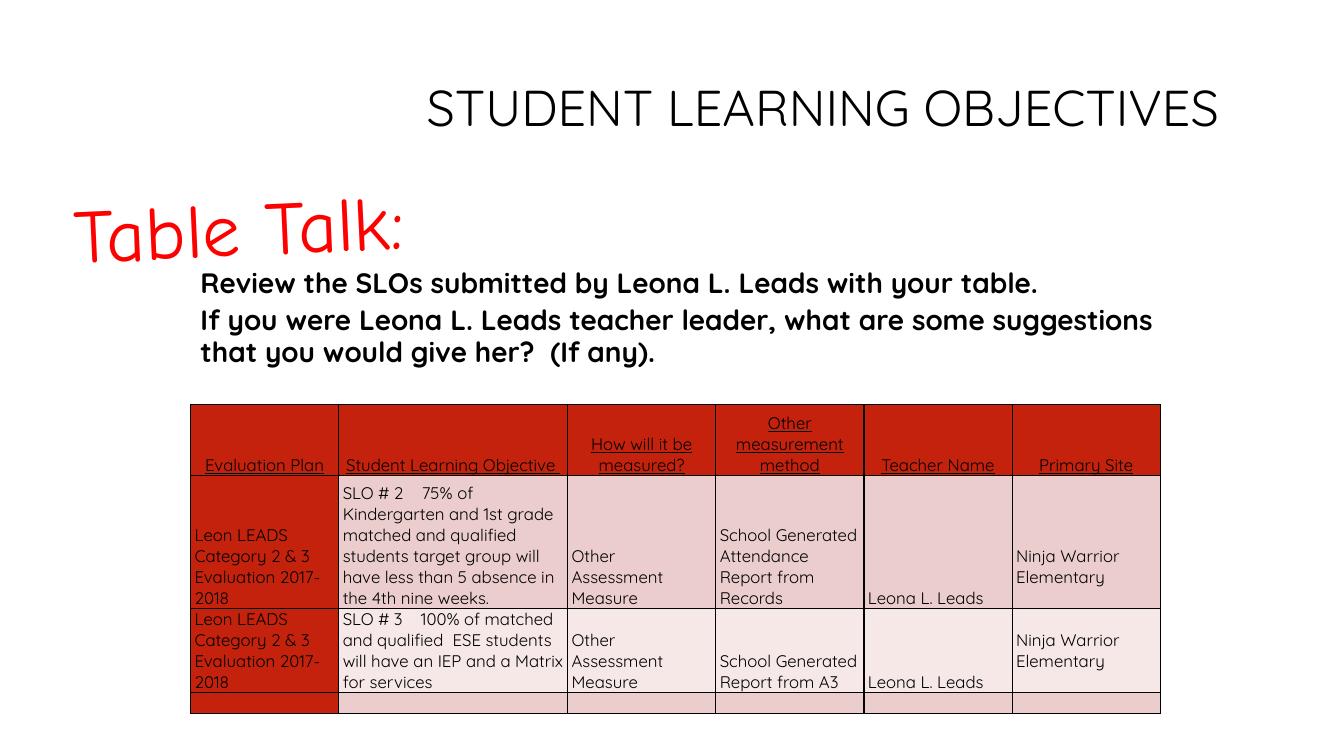
from lxml import etree
from pptx import Presentation
from pptx.dml.color import RGBColor
from pptx.enum.text import MSO_ANCHOR, PP_ALIGN
from pptx.oxml.ns import qn
from pptx.util import Inches, Pt

TITLE = "STUDENT LEARNING OBJECTIVES"
CALLOUT = "Table Talk:"
PROMPTS = [
    "Review the SLOs submitted by Leona L. Leads with your table.",
    "If you were Leona L. Leads teacher leader, what are some suggestions that you would give her?  (If any).",
]
PLAN = "Leon LEADS Category 2 & 3 Evaluation 2017-2018"
MEASURE = "Other Assessment Measure"
TEACHER = "Leona L. Leads"
SITE = "Ninja Warrior Elementary"
OBJECTIVES = [
    ["Evaluation Plan", "Student Learning Objective ", "How will it be measured?",
     "Other measurement method", "Teacher Name", "Primary Site"],
    [PLAN,
     "SLO # 2    75% of Kindergarten and 1st grade matched and qualified students target group "
     "will have less than 5 absence in the 4th nine weeks.",
     MEASURE, "School Generated Attendance Report from Records", TEACHER, SITE],
    [PLAN,
     "SLO # 3    100% of matched and qualified  ESE students will have an IEP and a Matrix for services",
     MEASURE, "School Generated Report from A3", TEACHER, SITE],
    [""] * 6,
]
COLUMN_WIDTHS = [1.47, 2.27, 1.47, 1.47, 1.47, 1.47]
ROW_HEIGHTS = [0.71, 1.32, 0.83, 0.21]

BLACK = RGBColor(0x00, 0x00, 0x00)
BRIGHT_RED = RGBColor(0xFF, 0x00, 0x00)
DARK_RED = RGBColor(0xC4, 0x22, 0x0D)
BANDS = [RGBColor(0xF5, 0xE8, 0xE7), RGBColor(0xEA, 0xCD, 0xCC)]
MAIN_FONT = "Quicksand"
CALLOUT_FONT = "Comic Neue"
LEFT, CENTER, RIGHT = PP_ALIGN.LEFT, PP_ALIGN.CENTER, PP_ALIGN.RIGHT
TOP, MIDDLE, BOTTOM = MSO_ANCHOR.TOP, MSO_ANCHOR.MIDDLE, MSO_ANCHOR.BOTTOM


def add_run(paragraph, text, size, font=MAIN_FONT, color=BLACK, bold=False, underline=False):
    run = paragraph.add_run()
    run.text = text
    run.font.size = Pt(size)
    run.font.name = font
    run.font.color.rgb = color
    run.font.bold = bold
    run.font.underline = underline


def add_text_frame(slide, left, top, width, height, anchor=TOP, rotation=0):
    shape = slide.shapes.add_textbox(Inches(left), Inches(top), Inches(width), Inches(height))
    shape.rotation = rotation
    shape.text_frame.word_wrap = True
    shape.text_frame.vertical_anchor = anchor
    return shape.text_frame


def add_borders(cell):
    properties = cell._tc.get_or_add_tcPr()
    for position, side in enumerate(("a:lnL", "a:lnR", "a:lnT", "a:lnB")):
        line = etree.Element(qn(side), w=str(Pt(1)))
        fill = etree.SubElement(line, qn("a:solidFill"))
        etree.SubElement(fill, qn("a:srgbClr"), val=str(BLACK))
        properties.insert(position, line)


def fill_cell(cell, text, row, column):
    header = row == 0
    cell.fill.solid()
    cell.fill.fore_color.rgb = DARK_RED if header or column == 0 else BANDS[row % 2]
    cell.vertical_anchor = BOTTOM
    cell.margin_left = cell.margin_right = Inches(0.04)
    cell.margin_top = 0
    cell.margin_bottom = Inches(0.21) if text == SITE else 0
    add_borders(cell)
    paragraph = cell.text_frame.paragraphs[0]
    paragraph.alignment = CENTER if header else LEFT
    if text:
        add_run(paragraph, text, 12, underline=header)
    else:
        ending = etree.SubElement(paragraph._p, qn("a:endParaRPr"), sz="1200")
        etree.SubElement(ending, qn("a:latin"), typeface=MAIN_FONT)


def add_objectives_table(slide):
    table = slide.shapes.add_table(
        len(ROW_HEIGHTS), len(COLUMN_WIDTHS), Inches(1.89), Inches(4.01),
        Inches(sum(COLUMN_WIDTHS)), Inches(sum(ROW_HEIGHTS))).table
    for column, width in zip(table.columns, COLUMN_WIDTHS):
        column.width = Inches(width)
    for row, height in zip(table.rows, ROW_HEIGHTS):
        row.height = Inches(height)
    for row, texts in enumerate(OBJECTIVES):
        for column, text in enumerate(texts):
            fill_cell(table.cell(row, column), text, row, column)


def main():
    presentation = Presentation()
    presentation.slide_width = Inches(13.33)
    presentation.slide_height = Inches(7.5)
    slide = presentation.slides.add_slide(presentation.slide_layouts[6])

    title = add_text_frame(slide, 3.19, 0.47, 9, 1.25, MIDDLE).paragraphs[0]
    title.alignment = RIGHT
    title.line_spacing = 0.9
    add_run(title, TITLE, 36)

    add_objectives_table(slide)

    callout = add_text_frame(slide, 0.63, 1.64, 8.07, 1.01, rotation=-2.6).paragraphs[0]
    add_run(callout, CALLOUT, 54, CALLOUT_FONT, BRIGHT_RED)

    prompts = add_text_frame(slide, 1.89, 2.61, 9.76, 1.2)
    for index, text in enumerate(PROMPTS):
        paragraph = prompts.add_paragraph() if index else prompts.paragraphs[0]
        paragraph.line_spacing = 0.94
        paragraph.space_before = Pt(4 if index else 0)
        add_run(paragraph, text, 20, bold=True)

    presentation.save("out.pptx")


if __name__ == "__main__":
    main()
